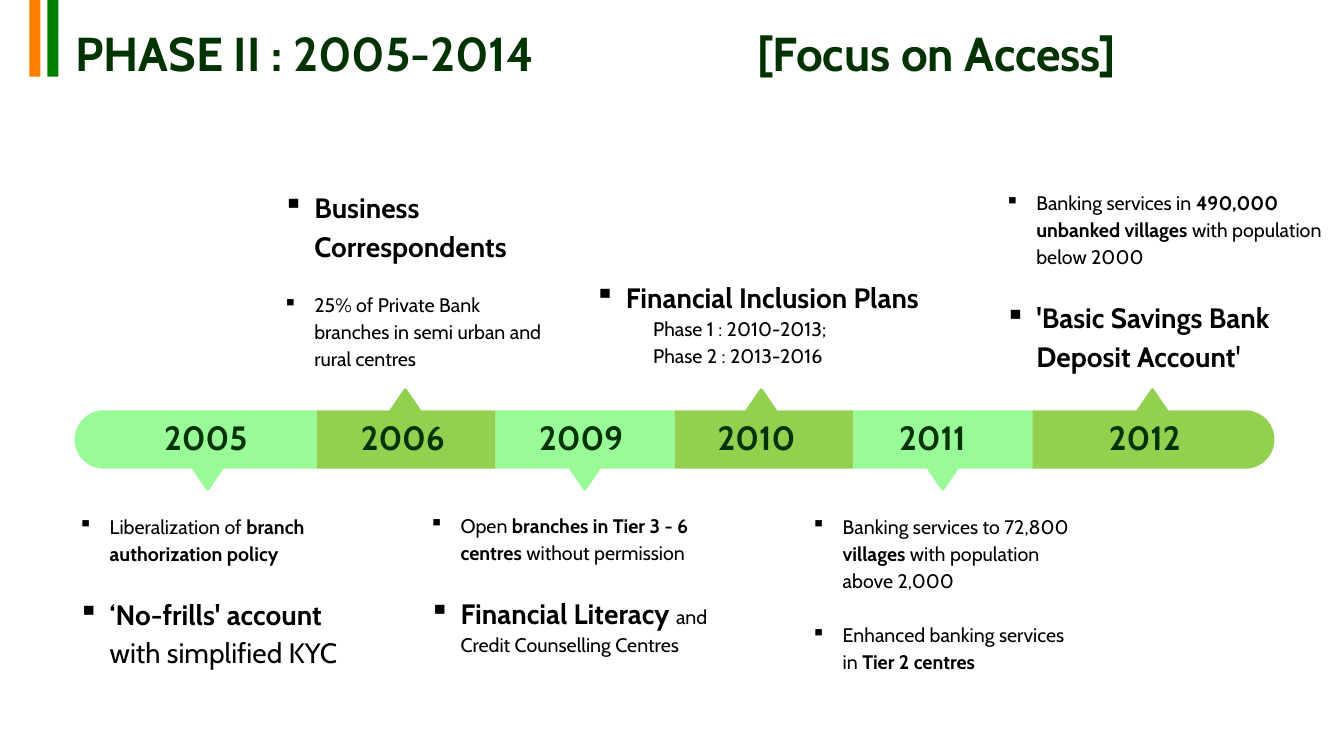
import pptx
import pptx.util
import pptx.dml.color
import pptx.enum.shapes
import pptx.enum.text
import pptx.oxml
import pptx.oxml.ns
from lxml import etree

Inches = pptx.util.Inches
Pt = pptx.util.Pt
SHAPES = pptx.enum.shapes.MSO_SHAPE

COLORS = {"saffron": "FF8000", "flag green": "008000", "mint": "98FB98",
          "lime": "92D050", "dark green": "003300", "black": "000000"}
FONT = "Cabin"
SMALL, LARGE = 14, 20
GAP = 19.4  # one small text line, in points

# Timeline band and its pointers
BAND_TOP, BAND_HEIGHT = 4.07, 0.58
FIRST_EDGE, SEGMENT_WIDTH = 3.14, 1.775
CAP_LENGTH = 2.4
POINTER = [(-0.15, 0.04), (-0.02, 0.23), (0, 0.25), (0.02, 0.23), (0.15, 0.04),
           (0.16, 0.02), (0.14, 0), (-0.14, 0), (-0.16, 0.02)]

# Year, left edge of its label, centre of its pointer
YEARS = [("2005", 1.53, 2.06), ("2006", 3.48, 4.02), ("2009", 5.25, 5.80),
         ("2010", 7.02, 7.55), ("2011", 8.82, 9.35), ("2012", 10.9, 11.43)]

# Box position, then paragraphs: (kind, runs of (text, size, bold))
NOTES = [
    ((0.68, 5.02, 2.85, 2.08), [
        ("bullet", [("Liberalization of ", SMALL, False),
                    ("branch authorization policy", SMALL, True)]),
        ("bullet", [("‘No-frills' account ", LARGE, True),
                    ("with simplified KYC", LARGE, False)])]),
    ((2.71, 1.79, 2.93, 1.96), [
        ("bullet", [("Business Correspondents", LARGE, True)]),
        ("bullet", [("25% of Private Bank branches in semi urban and rural centres",
                     SMALL, False)])]),
    ((4.16, 5.01, 3.41, 1.57), [
        ("bullet", [("Open ", SMALL, False),
                    ("branches in Tier 3 - 6 centres ", SMALL, True),
                    ("without permission", SMALL, False)]),
        ("bullet", [("Financial Literacy ", LARGE, True),
                    ("and Credit Counselling Centres", SMALL, False)])]),
    ((5.8, 2.68, 4, 1.03), [
        ("bullet", [("Financial Inclusion Plans", LARGE, True)]),
        ("detail", [("Phase 1 : 2010-2013;", SMALL, False)]),
        ("detail", [("Phase 2 : 2013-2016", SMALL, False)])]),
    ((7.95, 5.02, 2.81, 2), [
        ("bullet", [("Banking services to 72,800 ", SMALL, False),
                    ("villages ", SMALL, True),
                    ("with population above 2,000", SMALL, False)]),
        ("bullet", [("Enhanced banking services in ", SMALL, False),
                    ("Tier 2 centres", SMALL, True)])]),
    ((9.87, 1.81, 3.61, 1.96), [
        ("bullet", [("Banking services in ", SMALL, False),
                    ("490,000 unbanked villages ", SMALL, True),
                    ("with population below 2000", SMALL, False)]),
        ("bullet", [("'Basic Savings Bank Deposit Account", LARGE, True),
                    ("'", LARGE, False)])]),
]


def color(name):
    return pptx.dml.color.RGBColor.from_string(COLORS[name])


def style_font(font, size, bold, color_name):
    font.name = FONT
    font.size = Pt(size)
    font.bold = bold
    font.color.rgb = color(color_name)


def paint(shape, color_name):
    shape.shadow.inherit = False
    shape.fill.solid()
    shape.fill.fore_color.rgb = color(color_name)
    shape.line.fill.background()


def add_block(page, kind, left, top, width, height, color_name):
    block = page.shapes.add_shape(kind, Inches(left), Inches(top),
                                  Inches(width), Inches(height))
    paint(block, color_name)
    return block


def add_cap(page, left, rotation, color_name):
    """Round-ended band piece: an upright shape turned on its side."""
    shift = (CAP_LENGTH - BAND_HEIGHT) / 2
    cap = add_block(page, SHAPES.ROUND_2_SAME_RECTANGLE, left + shift,
                    BAND_TOP - shift, BAND_HEIGHT, CAP_LENGTH, color_name)
    cap.adjustments[0] = 0.5
    cap.rotation = rotation


def add_pointer(page, center, upward, color_name):
    base, direction = (4.1, -1) if upward else (4.62, 1)
    points = [(Inches(center + x), Inches(base + direction * y)) for x, y in POINTER]
    builder = page.shapes.build_freeform(*points[0])
    builder.add_line_segments(points[1:], close=True)
    paint(builder.convert_to_shape(), color_name)


def add_year(page, year, left, color_name):
    label = add_block(page, SHAPES.RECTANGLE, left, 4.09, 1.06, 0.5, color_name)
    frame = label.text_frame
    frame.text = year
    frame.word_wrap = False
    frame.auto_size = pptx.enum.text.MSO_AUTO_SIZE.SHAPE_TO_FIT_TEXT
    frame.vertical_anchor = pptx.enum.text.MSO_ANCHOR.TOP
    para = frame.paragraphs[0]
    para.alignment = pptx.enum.text.PP_ALIGN.LEFT
    style_font(para.runs[0].font, 24, True, "dark green")


def add_text_box(page, left, top, width, height):
    box = page.shapes.add_textbox(Inches(left), Inches(top),
                                  Inches(width), Inches(height))
    box.text_frame.word_wrap = True
    return box.text_frame


def add_title(page):
    frame = add_text_box(page, 0.65, 0.28, 12.68, 0.55)
    frame.vertical_anchor = pptx.enum.text.MSO_ANCHOR.MIDDLE
    para = frame.paragraphs[0]
    para.text = "PHASE II : 2005-2014\t[Focus on Access]"
    para.line_spacing = 0.9
    tabs = etree.SubElement(para._p.get_or_add_pPr(), pptx.oxml.ns.qn("a:tabLst"))
    etree.SubElement(tabs, pptx.oxml.ns.qn("a:tab"), pos=str(Inches(6.76)), algn="l")
    for span in para.runs:
        style_font(span.font, 34, True, "dark green")


def indent(para, kind):
    properties = para._p.get_or_add_pPr()
    if kind == "bullet":
        properties.set("marL", str(Inches(0.31)))
        properties.set("indent", str(-Inches(0.31)))
        etree.SubElement(properties, pptx.oxml.ns.qn("a:buChar"), char="▪")
    else:
        properties.set("marL", str(Inches(0.58)))
        properties.set("indent", "0")


def add_note(page, place, paragraphs):
    frame = add_text_box(page, *place)
    for number, (kind, runs) in enumerate(paragraphs):
        para = frame.add_paragraph() if number else frame.paragraphs[0]
        indent(para, kind)
        para.line_spacing = 1.15
        if number and kind == "bullet":
            para.space_before = Pt(GAP)
        for text, size, bold in runs:
            span = para.add_run()
            span.text = text
            style_font(span.font, size, bold, "black")


def add_timeline(page):
    last = len(YEARS) - 1
    for number, (year, label_left, center) in enumerate(YEARS):
        upward = number in (1, 3, 5)
        shade = "lime" if upward else "mint"
        edge = FIRST_EDGE + (number - 1) * SEGMENT_WIDTH
        if number == 0:
            add_cap(page, FIRST_EDGE - CAP_LENGTH, 270, shade)
        elif number == last:
            add_cap(page, edge, 90, shade)
        else:
            add_block(page, SHAPES.RECTANGLE, edge, BAND_TOP,
                      SEGMENT_WIDTH, BAND_HEIGHT, shade)
        add_pointer(page, center, upward, shade)
        add_year(page, year, label_left, shade)


def main():
    deck = pptx.Presentation()
    deck.slide_width, deck.slide_height = Inches(13.33), Inches(7.5)
    page = deck.slides.add_slide(deck.slide_layouts[6])

    # Heading with its two stripes
    for left, stripe in ((0.29, "saffron"), (0.47, "flag green")):
        add_block(page, SHAPES.RECTANGLE, left, 0, 0.11, 0.76, stripe)
    add_title(page)

    # Timeline and the notes around it
    add_timeline(page)
    for place, paragraphs in NOTES:
        add_note(page, place, paragraphs)

    deck.save("out.pptx")


if __name__ == "__main__":
    main()
